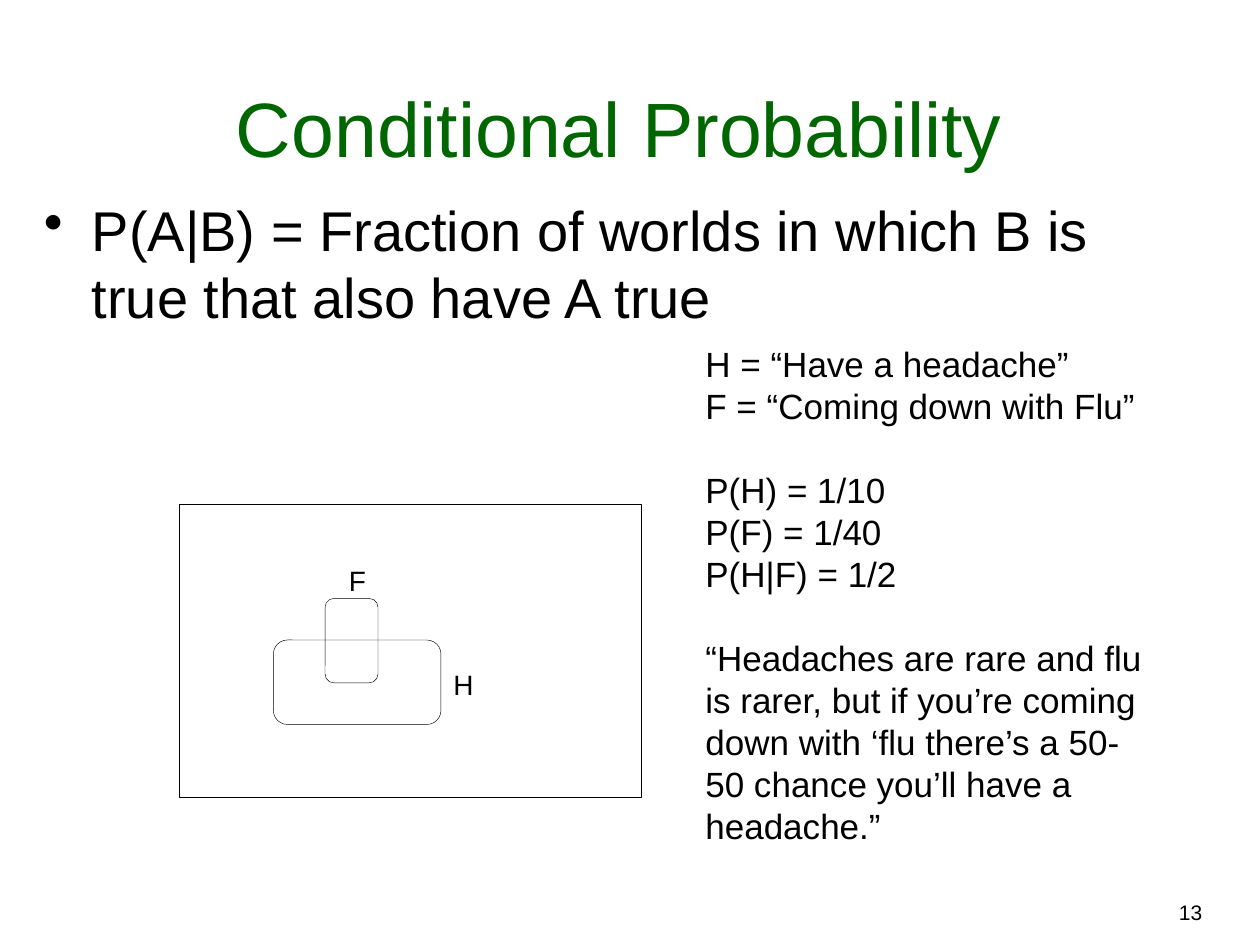
import pptx
import pptx.util
import pptx.dml.color
import pptx.enum.shapes
import pptx.enum.text
from dataclasses import dataclass
from lxml import etree
from pptx.util import Inches, Pt

ALIGN = pptx.enum.text.PP_ALIGN
ANCHOR = pptx.enum.text.MSO_ANCHOR
SHAPE = pptx.enum.shapes.MSO_SHAPE


@dataclass(frozen=True)
class Theme:
    font: str = "Arial"
    ink: str = "000000"
    green: str = "006600"
    title: int = 44
    body: int = 32
    notes: int = 20
    label: int = 16
    number: int = 12
    line: float = 0.25


THEME = Theme()


def rgb(value):
    return pptx.dml.color.RGBColor.from_string(value)


def add_text(page, box, lines, size, color=THEME.ink, align=ALIGN.LEFT,
             anchor=ANCHOR.TOP, wrap=True):
    """Place one paragraph per line and return the paragraphs."""
    frame = page.shapes.add_textbox(*map(Inches, box)).text_frame
    frame.word_wrap = wrap
    frame.vertical_anchor = anchor
    paras = []
    for index, line in enumerate(lines):
        para = frame.add_paragraph() if index else frame.paragraphs[0]
        para.alignment = align
        span = para.add_run()
        span.text = line
        span.font.name = THEME.font
        span.font.size = Pt(size)
        span.font.color.rgb = rgb(color)
        paras.append(para)
    return paras


def add_outline(page, box, kind):
    shape = page.shapes.add_shape(kind, *map(Inches, box))
    shape.shadow.inherit = False
    shape.fill.background()
    shape.line.color.rgb = rgb(THEME.ink)
    shape.line.width = Pt(THEME.line)
    return shape


def add_definition(page, box):
    para, = add_text(page, box, [
        "P(A|B) = Fraction of worlds in which B is true that also have A true"
    ], THEME.body)
    # Hanging bullet
    props = para._p.get_or_add_pPr()
    props.set("marL", str(Inches(0.38)))
    props.set("indent", str(-Inches(0.38)))
    bullet = etree.SubElement(props, pptx.oxml.ns.qn("a:buChar"))
    bullet.set("char", "•")


def add_venn(page, box):
    left, top, _, _ = box
    add_outline(page, box, SHAPE.RECTANGLE)
    # Events: offset and size in the world box, then offset of the label box
    events = [
        ("H", (0.75, 1.08, 1.33, 0.67), (2.08, 1.25, 0.35, 0.37)),
        ("F", (1.16, 0.75, 0.42, 0.67), (1.25, 0.42, 0.32, 0.37)),
    ]
    for name, area, label in events:
        area, label = [(left + x, top + y, width, height)
                       for x, y, width, height in (area, label)]
        add_outline(page, area, SHAPE.ROUNDED_RECTANGLE)
        add_text(page, label, [name], THEME.label, align=ALIGN.CENTER,
                 wrap=False)


def add_notes(page, box):
    groups = [
        ["H = “Have a headache”", "F = “Coming down with Flu”"],
        ["P(H) = 1/10", "P(F) = 1/40", "P(H|F) = 1/2"],
        ["“Headaches are rare and flu is rarer, but if you’re coming down "
         "with ‘flu there’s a 50-50 chance you’ll have a headache.”"],
    ]
    paras = add_text(page, box, sum(groups, []), THEME.notes)
    # One line of space before each later group
    start = 0
    for group in groups[:-1]:
        start += len(group)
        paras[start].space_before = Pt(24)


def main():
    deck = pptx.Presentation()
    deck.slide_width, deck.slide_height = Inches(10), Inches(7.5)
    page = deck.slides.add_slide(deck.slide_layouts[6])

    # Slide number and title
    add_text(page, (5.72, 7.09, 3.92, 0.3), ["13"], THEME.number,
             align=ALIGN.RIGHT)
    add_text(page, (0.25, 0.25, 9.33, 1.17), ["Conditional Probability"],
             THEME.title, THEME.green, ALIGN.CENTER, ANCHOR.BOTTOM)

    # Definition, diagram and worked example
    add_definition(page, (0.25, 1.5, 9.38, 1.25))
    add_venn(page, (1.42, 4, 3.67, 2.33))
    add_notes(page, (5.5, 2.67, 3.67, 4.1))

    deck.save("out.pptx")


if __name__ == "__main__":
    main()
